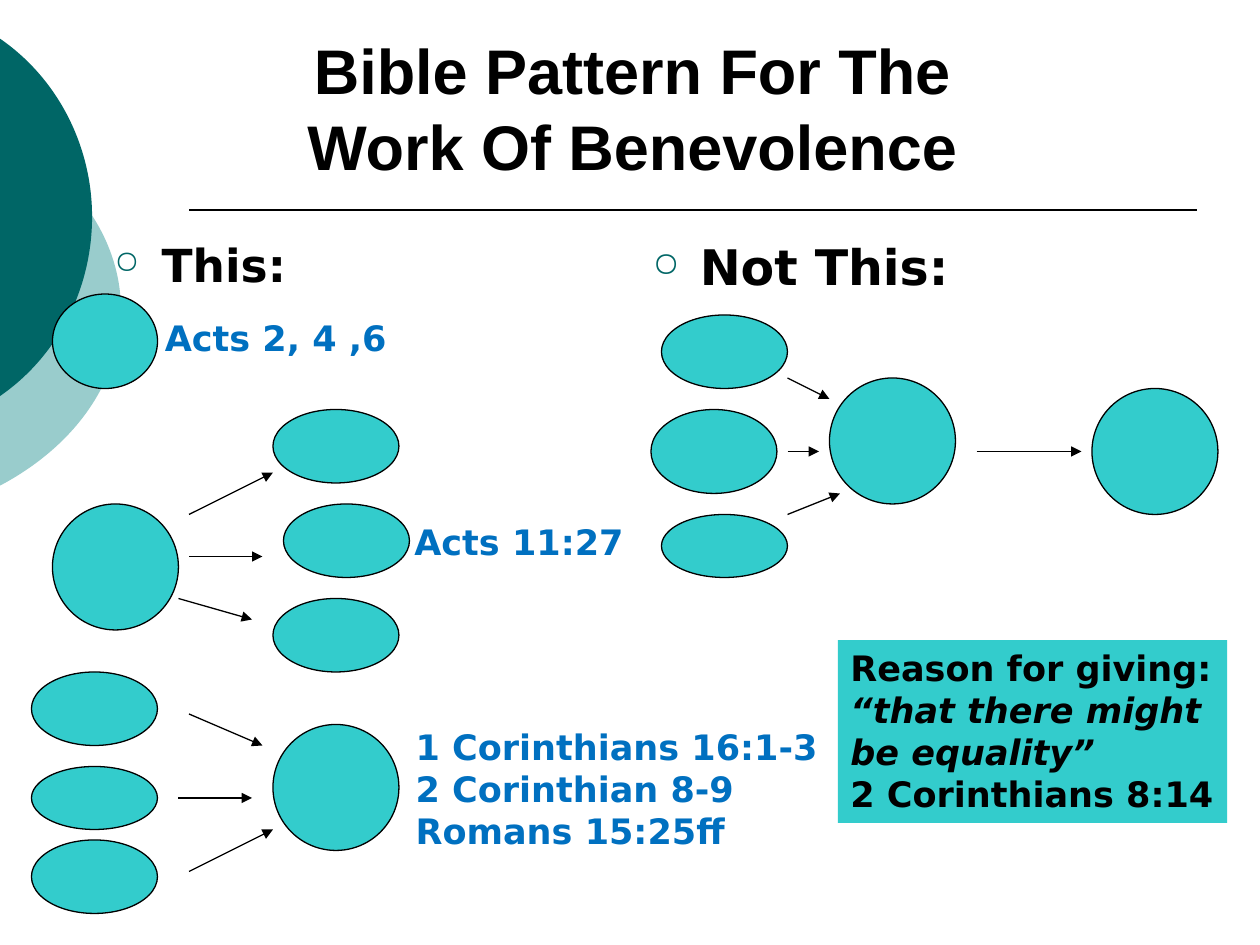
import pptx
import pptx.util
import pptx.dml.color
import pptx.enum.shapes
import pptx.enum.text
import pptx.oxml.ns
import lxml.etree

Pt = pptx.util.Pt
COLORS = {"pale": "99CCCC", "dark": "006666", "teal": "33CCCC", "blue": "0070C0", "black": "000000"}
RGB = {name: pptx.dml.color.RGBColor.from_string(value) for name, value in COLORS.items()}

deck = pptx.Presentation()
deck.slide_width, deck.slide_height = Pt(720), Pt(540)
page = deck.slides.add_slide(deck.slide_layouts[6])


def add_line(start_x, start_y, end_x, end_y, width, arrow):
    line = page.shapes.add_connector(
        pptx.enum.shapes.MSO_CONNECTOR.STRAIGHT, Pt(start_x), Pt(start_y), Pt(end_x), Pt(end_y))
    line.line.color.rgb = RGB["black"]
    line.line.width = Pt(width)
    if arrow:
        lxml.etree.SubElement(line.line._get_or_add_ln(), pptx.oxml.ns.qn("a:tailEnd"), type="triangle")
    lxml.etree.SubElement(line._element.spPr, pptx.oxml.ns.qn("a:effectLst"))


def add_text(left, top, width, height, lines, size, color, font="DejaVu Sans", fill=None):
    box = page.shapes.add_textbox(Pt(left), Pt(top), Pt(width), Pt(height))
    if fill:
        box.fill.solid()
        box.fill.fore_color.rgb = RGB[fill]
    box.text_frame.word_wrap = True
    for index, (text, italic) in enumerate(lines):
        para = box.text_frame.add_paragraph() if index else box.text_frame.paragraphs[0]
        para.line_spacing = Pt(round(size * 1.2, 1))
        span = para.add_run()
        span.text = text
        span.font.name = font
        span.font.size = Pt(size)
        span.font.bold = True
        span.font.italic = italic
        span.font.color.rgb = RGB[color]
    return box


discs = [
    ("pale", -254.9, 54, 324, 246.2, [
        (-0.7, 76.3), (43.2, 99.4), (69.1, 136.8), (69.1, 177.1),
        (69.1, 217.4), (43.2, 254.9), (-0.7, 277.9)]),
    ("dark", -190.8, 0, 243.4, 248.4, [
        (-0.7, 21.6), (33.1, 44.6), (52.6, 83.5), (52.6, 123.8),
        (52.6, 164.9), (33.1, 203.8), (-0.7, 226.8)]),
]
for color, left, top, width, height, curve in discs:
    builder = page.shapes.build_freeform(left * 10, top * 10, scale=Pt(1) / 10)
    right, bottom = left + width, top + height
    builder.add_line_segments(
        [(x * 10, y * 10) for x, y in [(right, top), (right, bottom), (left, bottom)]], close=True)
    disc = builder.convert_to_shape()
    disc.shadow.inherit = False
    disc.fill.solid()
    disc.fill.fore_color.rgb = RGB[color]
    disc.line.fill.background()
    outline = next(disc._element.iter(pptx.oxml.ns.qn("a:path")))
    for segment in list(outline):
        outline.remove(segment)
    for kind, points in [("moveTo", curve[:1]), ("cubicBezTo", curve[1:4]),
                         ("cubicBezTo", curve[4:]), ("close", [])]:
        segment = lxml.etree.SubElement(outline, pptx.oxml.ns.qn("a:" + kind))
        for x, y in points:
            lxml.etree.SubElement(segment, pptx.oxml.ns.qn("a:pt"),
                                  x=str(round((x - left) * 10)), y=str(round((y - top) * 10)))

add_line(108, 120, 684, 120, 1, False)

for left, width, height, text, size in [
    (58.3, 121, 38.9, "This:", 26),
    (365.8, 189.4, 41, "Not This:", 28),
]:
    heading = add_text(left, 131.8, width, height, [(text, False)], size, "black")
    properties = heading.text_frame.paragraphs[0]._p.get_or_add_pPr()
    properties.set("marL", str(Pt(27)))
    properties.set("indent", str(Pt(-27)))
    bullet_color = lxml.etree.SubElement(properties, pptx.oxml.ns.qn("a:buClr"))
    lxml.etree.SubElement(bullet_color, pptx.oxml.ns.qn("a:srgbClr"), val=COLORS["dark"])
    lxml.etree.SubElement(properties, pptx.oxml.ns.qn("a:buSzPct"), val="70000")
    lxml.etree.SubElement(properties, pptx.oxml.ns.qn("a:buFont"), typeface="OpenSymbol")
    lxml.etree.SubElement(properties, pptx.oxml.ns.qn("a:buChar"), char="○")

churches = [
    (30, 168, 60, 54),
    (30, 288, 72, 72), (156, 234, 72, 42), (162, 288, 72, 42), (156, 342, 72, 42),
    (18, 384, 72, 42), (18, 438, 72, 36), (18, 480, 72, 42), (156, 414, 72, 72),
    (378, 180, 72, 42), (372, 234, 72, 48), (378, 294, 72, 36),
    (474, 216, 72, 72), (624, 222, 72, 72),
]
for bounds in churches:
    church = page.shapes.add_shape(pptx.enum.shapes.MSO_SHAPE.OVAL, *map(Pt, bounds))
    church.shadow.inherit = False
    church.fill.solid()
    church.fill.fore_color.rgb = RGB["teal"]
    church.line.color.rgb = RGB["black"]
    church.line.width = Pt(0.75)

gifts = [
    (108, 294, 156, 270), (108, 318, 150, 318), (102, 342, 144, 354),
    (108, 408, 150, 426), (102, 456, 144, 456), (108, 498, 156, 474),
    (450, 216, 474, 228), (450, 258, 468, 258), (450, 294, 480, 282),
    (558, 258, 618, 258),
]
for ends in gifts:
    add_line(*ends, 0.75, True)

references = [
    (87.1, 177.1, 141.8, 31.5, ["Acts 2, 4 ,6"]),
    (229.7, 294, 136.1, 31.5, ["Acts 11:27"]),
    (230.4, 411.1, 247.7, 80, ["1 Corinthians 16:1-3", "2 Corinthian 8-9", "Romans 15:25ff"]),
]
for left, top, width, height, lines in references:
    add_text(left, top, width, height, [(line, False) for line in lines], 20, "blue")

reason = [
    ("Reason for giving:", False),
    ("“that there might be equality”", True),
    ("2 Corinthians 8:14", False),
]
add_text(478.8, 365.8, 222.5, 104.4, reason, 20, "black", fill="teal")

title = add_text(168.1, 13.7, 386.6, 94.3, [("Bible Pattern For The Work Of Benevolence", False)],
                 36, "black", font="Arial")
title.text_frame.vertical_anchor = pptx.enum.text.MSO_ANCHOR.BOTTOM
title.text_frame.paragraphs[0].alignment = pptx.enum.text.PP_ALIGN.CENTER

deck.save("out.pptx")
